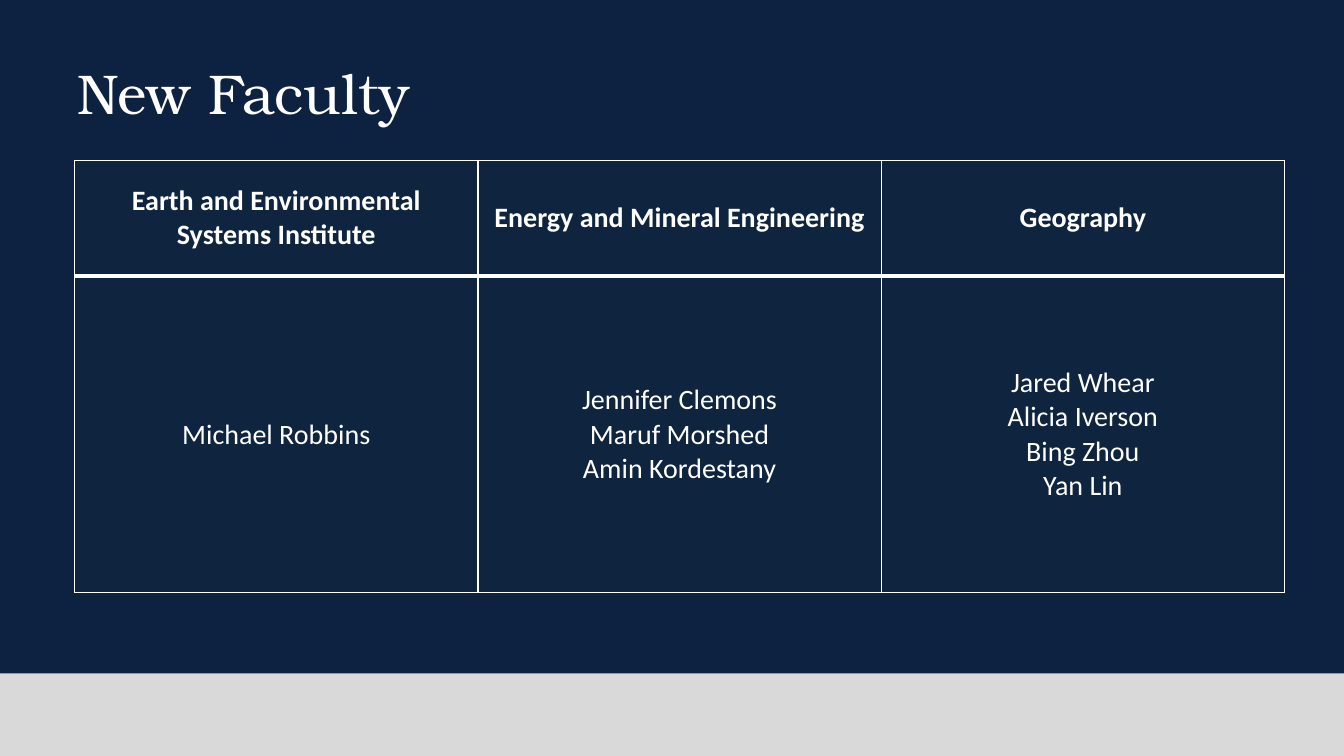
import pptx
import pptx.util
import pptx.dml.color
import pptx.enum.shapes
import pptx.enum.text
from lxml import etree

Inches = pptx.util.Inches
Pt = pptx.util.Pt
ANCHOR = pptx.enum.text.MSO_ANCHOR
ALIGN = pptx.enum.text.PP_ALIGN

NAVY, GRAY, DARK, WHITE = "0D2241", "D9D9D9", "0F243E", "FFFFFF"
HEAD = {"name": "Calibri", "size": Pt(20), "bold": True}
BODY = {**HEAD, "bold": False}
TITLE = {"name": "TeX Gyre Bonum", "size": Pt(40), "bold": False}
INSETS = {
    "margin_left": Inches(0.11), "margin_right": Inches(0.11),
    "margin_top": Inches(0.06), "margin_bottom": Inches(0.06),
    "vertical_anchor": ANCHOR.MIDDLE,
}
FACULTY = {
    "Earth and Environmental Systems Institute": ["Michael Robbins"],
    "Energy and Mineral Engineering": [
        "Jennifer Clemons", "Maruf Morshed", "Amin Kordestany"],
    "Geography": ["Jared Whear", "Alicia Iverson", "Bing Zhou", "Yan Lin"],
}


def color(code):
    return pptx.dml.color.RGBColor.from_string(code)


def apply(item, form):
    for key, value in form.items():
        setattr(item, key, value)


def paint(fill, code):
    fill.solid()
    fill.fore_color.rgb = color(code)


def add_band(slide, top, height, code):
    band = slide.shapes.add_shape(
        pptx.enum.shapes.MSO_SHAPE.RECTANGLE,
        0, Inches(top), Inches(13.33), Inches(height))
    band.shadow.inherit = False
    paint(band.fill, code)
    band.line.fill.background()


def write(frame, lines, form, align):
    frame.text = "\n".join(lines)
    for para in frame.paragraphs:
        para.alignment = align
        for run in para.runs:
            apply(run.font, form)
            run.font.color.rgb = color(WHITE)


def add_title(slide, text):
    box = slide.shapes.add_textbox(
        Inches(0.67), Inches(0.36), Inches(12), Inches(1.11))
    frame = box.text_frame
    apply(frame, {"word_wrap": True, "vertical_anchor": ANCHOR.MIDDLE})
    write(frame, [text], TITLE, ALIGN.LEFT)


def add_edge(cell, side, width):
    tag = pptx.oxml.ns.qn
    props = cell._tc.get_or_add_tcPr()
    edge = etree.SubElement(props, tag("a:ln" + side), w=str(Pt(width)))
    fill = etree.SubElement(edge, tag("a:solidFill"))
    etree.SubElement(fill, tag("a:srgbClr"), val=WHITE)


def fill_cell(cell, lines, form, edges):
    apply(cell, INSETS)
    for side, width in edges.items():
        add_edge(cell, side, width)
    paint(cell.fill, DARK)
    write(cell.text_frame, lines, form, ALIGN.CENTER)


def add_grid(slide):
    grid = slide.shapes.add_table(
        2, len(FACULTY), Inches(0.74), Inches(1.59),
        Inches(12), Inches(4.29)).table
    for row, height in zip(grid.rows, (1.15, 3.14)):
        row.height = Inches(height)
    for col, (unit, names) in enumerate(FACULTY.items()):
        grid.columns[col].width = Inches(4)
        fill_cell(grid.cell(0, col), [unit], HEAD,
                  {"L": 1, "R": 1, "T": 1, "B": 3})
        fill_cell(grid.cell(1, col), names, BODY,
                  {"L": 1, "R": 1, "T": 3, "B": 1})


def main():
    deck = pptx.Presentation()
    apply(deck, {"slide_width": Inches(13.33), "slide_height": Inches(7.5)})
    slide = deck.slides.add_slide(deck.slide_layouts[6])
    add_band(slide, 0, 6.7, NAVY)
    add_band(slide, 6.68, 0.82, GRAY)
    add_title(slide, "New Faculty")
    add_grid(slide)
    deck.save("out.pptx")


if __name__ == "__main__":
    main()
